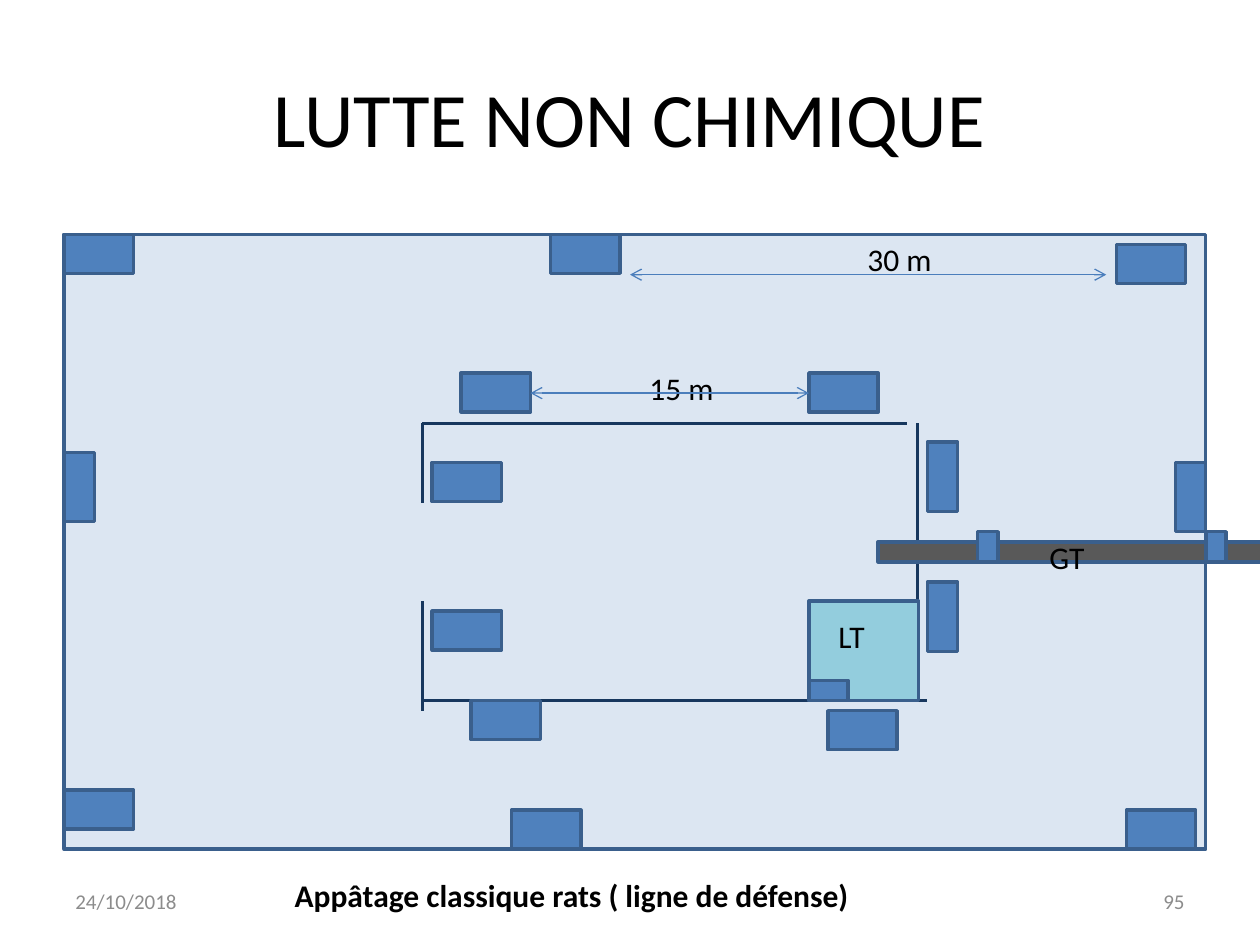
from lxml import etree
from pptx import Presentation
from pptx.dml.color import RGBColor
from pptx.enum.shapes import MSO_CONNECTOR, MSO_SHAPE
from pptx.enum.text import MSO_ANCHOR, PP_ALIGN
from pptx.oxml.ns import qn
from pptx.util import Inches, Pt

RECT, STRAIGHT = MSO_SHAPE.RECTANGLE, MSO_CONNECTOR.STRAIGHT
TOP, MIDDLE = MSO_ANCHOR.TOP, MSO_ANCHOR.MIDDLE
LEFT, CENTER, RIGHT = PP_ALIGN.LEFT, PP_ALIGN.CENTER, PP_ALIGN.RIGHT

THEME = {
    "font": "Calibri",
    "colors": {"text": "000000", "muted": "8C8C8C", "outline": "3A5F8C",
               "site": "DCE6F2", "station": "4F81BD", "room": "93CDDD",
               "pipe": "595959", "wall": "17375E", "distance": "4B7EBC"},
    "sizes": {"title": 44, "label": 18, "footer": 12},
    "lines": {"outline": 2, "wall": 1.75, "distance": 0.75},
}

# Plan: left, top, width, height
SITE = (0.51, 1.86, 9.06, 4.88)
ROOM = (6.42, 4.77, 0.87, 0.79)
PIPE = (6.97, 4.3, 3.46, 0.16)

# Bait stations: size, then the top left corner of each
STATIONS = [
    ((0.55, 0.31), [
        (0.51, 1.86), (4.37, 1.86), (8.86, 1.94),    # top of the site
        (0.51, 6.27), (4.06, 6.43), (8.94, 6.43),    # bottom of the site
        (3.66, 2.96), (6.42, 2.96),                  # above the building
        (3.43, 3.67), (3.43, 4.85),                  # inside the building
        (3.74, 5.56), (6.57, 5.64)]),                # below the building
    ((0.24, 0.55), [(0.51, 3.59), (7.36, 3.51), (7.36, 4.62), (9.33, 3.67)]),
    ((0.16, 0.24), [(7.76, 4.22), (9.57, 4.22)]),    # on the pipe
    ((0.31, 0.16), [(6.42, 5.4)]),                   # in the room
]

# Lines: x1, y1, x2, y2
WALLS = [
    (3.35, 3.36, 7.2, 3.36), (3.35, 5.56, 7.36, 5.56), (7.28, 3.36, 7.28, 5.56),
    (3.35, 3.36, 3.35, 3.99), (3.35, 4.77, 3.35, 5.64),
]
DISTANCES = [(5, 2.18, 8.78, 2.18), (4.21, 3.12, 6.42, 3.12)]

# Texts: wording, place, size, colour, bold, alignment, anchor
TEXTS = [
    ("LUTTE NON CHIMIQUE", (0.5, 0.3, 9, 1.25), "title", "text", False, CENTER, MIDDLE),
    ("Appâtage classique rats ( ligne de défense)", (2.24, 6.9, 5.91, 0.4),
     "label", "text", True, LEFT, TOP),
    (" LT", (6.5, 4.85, 0.71, 0.4), "label", "text", False, LEFT, TOP),
    (" 30 m", (6.73, 1.86, 0.87, 0.4), "label", "text", False, LEFT, TOP),
    (" 15 m", (5, 2.88, 0.87, 0.4), "label", "text", False, LEFT, TOP),
    ("GT", (8.23, 4.22, 0.87, 0.4), "label", "text", False, LEFT, TOP),
    ("24/10/2018", (0.5, 6.95, 2.33, 0.4), "footer", "muted", False, LEFT, MIDDLE),
    ("95", (7.17, 6.95, 2.33, 0.4), "footer", "muted", False, RIGHT, MIDDLE),
]


def color(role):
    return RGBColor.from_string(THEME["colors"][role])


def set_all(target, values):
    for name, value in values.items():
        setattr(target, name, value)


def style_line(line, role):
    line.color.rgb = color(role)
    line.width = Pt(THEME["lines"][role])


def add_block(slide, place, role):
    block = slide.shapes.add_shape(RECT, *map(Inches, place))
    block.shadow.inherit = False
    block.fill.solid()
    block.fill.fore_color.rgb = color(role)
    style_line(block.line, "outline")


def add_line(slide, ends, role, arrows=False):
    connector = slide.shapes.add_connector(STRAIGHT, *map(Inches, ends))
    style_line(connector.line, role)
    if arrows:
        outline = connector.line._get_or_add_ln()
        for end in ("a:headEnd", "a:tailEnd"):
            etree.SubElement(outline, qn(end), type="arrow")
    etree.SubElement(connector._element.spPr, qn("a:effectLst"))


def add_text(slide, wording, place, size, role, bold, align, anchor):
    frame = slide.shapes.add_textbox(*map(Inches, place)).text_frame
    set_all(frame, {"word_wrap": True, "vertical_anchor": anchor})
    paragraph = frame.paragraphs[0]
    set_all(paragraph, {"text": wording, "alignment": align})
    font = paragraph.runs[0].font
    set_all(font, {"name": THEME["font"], "size": Pt(THEME["sizes"][size]), "bold": bold})
    font.color.rgb = color(role)


def main():
    deck = Presentation()
    set_all(deck, {"slide_width": Inches(10), "slide_height": Inches(7.5)})
    slide = deck.slides.add_slide(deck.slide_layouts[6])

    # Site, building and pipe
    add_block(slide, SITE, "site")
    for wall in WALLS:
        add_line(slide, wall, "wall")
    add_block(slide, ROOM, "room")
    add_block(slide, PIPE, "pipe")

    # Bait stations
    for size, corners in STATIONS:
        for corner in corners:
            add_block(slide, corner + size, "station")

    # Title, labels and footer
    for text in TEXTS:
        add_text(slide, *text)

    # Distances between stations
    for distance in DISTANCES:
        add_line(slide, distance, "distance", arrows=True)

    deck.save("out.pptx")


if __name__ == "__main__":
    main()
